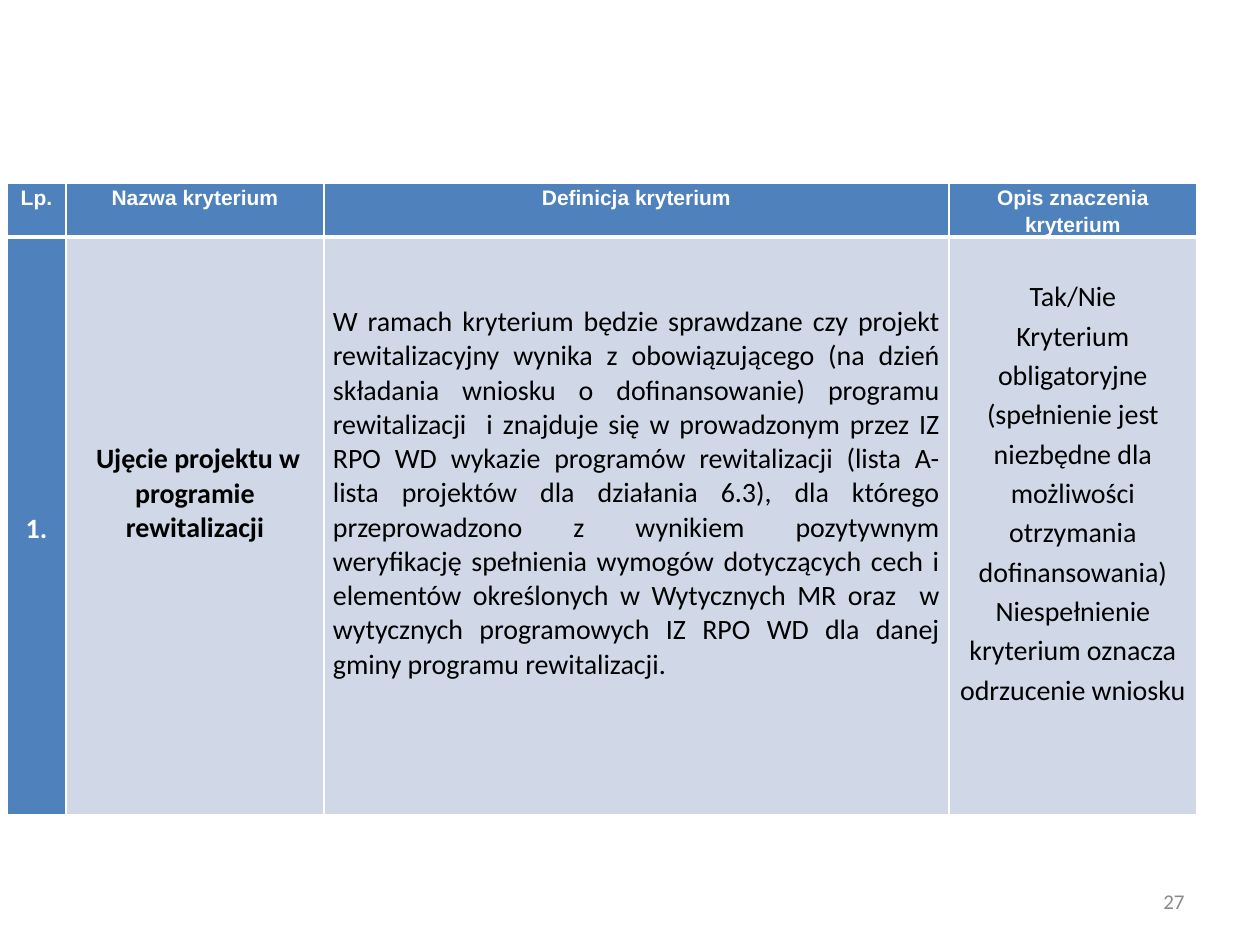
from lxml.etree import SubElement
from pptx import Presentation
from pptx.dml.color import RGBColor
from pptx.enum.text import MSO_ANCHOR as ANCHOR, PP_ALIGN as ALIGN
from pptx.oxml.ns import qn
from pptx.util import Emu, Pt

PX = 914400 // 126
COLORS = {"blue": "4F81BD", "pale": "D0D8E8", "white": "FFFFFF",
          "black": "000000", "gray": "898989"}


def write(frame, lines, font, size, color, bold=False, align=ALIGN.CENTER, spacing=None, after=None):
    frame.word_wrap = True
    for index, line in enumerate(lines):
        paragraph = frame.paragraphs[0] if index == 0 else frame.add_paragraph()
        paragraph.text = line
        paragraph.alignment = align
        paragraph.line_spacing = spacing
        paragraph.space_after = after
        paragraph.font.name = font
        paragraph.font.size = Pt(size)
        paragraph.font.bold = bold
        paragraph.font.color.rgb = RGBColor.from_string(COLORS[color])


def style(cell, fill, top, bottom, margin_top=0):
    cell.margin_left = cell.margin_right = Emu(9 * PX)
    cell.margin_top, cell.margin_bottom = Emu(margin_top * PX), 0
    properties = cell._tc.get_or_add_tcPr()
    for side, width in (("L", 1), ("R", 1), ("T", top), ("B", bottom)):
        line = SubElement(properties, qn(f"a:ln{side}"), w=str(Pt(width)))
        SubElement(SubElement(line, qn("a:solidFill")), qn("a:srgbClr"), val=COLORS["white"])
    cell.fill.solid()
    cell.fill.fore_color.rgb = RGBColor.from_string(COLORS[fill])


presentation = Presentation()
presentation.slide_width = Emu(1260 * PX)
presentation.slide_height = Emu(945 * PX)
slide = presentation.slides.add_slide(presentation.slide_layouts[6])

column_widths = [59, 258, 625, 248]
row_heights = [53, 578]
table = slide.shapes.add_table(
    2, 4, Emu(7 * PX), Emu(183 * PX),
    Emu(sum(column_widths) * PX), Emu(sum(row_heights) * PX)).table
for column, width in zip(table.columns, column_widths):
    column.width = Emu(width * PX)
for row, height in zip(table.rows, row_heights):
    row.height = Emu(height * PX)

headers = ["Lp.", "Nazwa kryterium", "Definicja kryterium", "Opis znaczenia kryterium"]
for index, header in enumerate(headers):
    cell = table.cell(0, index)
    style(cell, "blue", 1, 3)
    write(cell.text_frame, [header], "Arial", 12, "white", True, spacing=1.15, after=Pt(10))

definition = (
    "W ramach kryterium będzie sprawdzane czy projekt rewitalizacyjny wynika z obowiązującego "
    "(na dzień składania wniosku o dofinansowanie) programu rewitalizacji  i znajduje się w "
    "prowadzonym przez IZ RPO WD wykazie programów rewitalizacji (lista A-lista projektów dla "
    "działania 6.3), dla którego przeprowadzono z wynikiem pozytywnym weryfikację spełnienia "
    "wymogów dotyczących cech i elementów określonych w Wytycznych MR oraz  w wytycznych "
    "programowych IZ RPO WD dla danej gminy programu rewitalizacji.")
meaning = [
    "Tak/Nie",
    "Kryterium obligatoryjne",
    "(spełnienie jest niezbędne dla możliwości otrzymania dofinansowania)",
    "Niespełnienie kryterium oznacza",
    "odrzucenie wniosku",
]
criterion = [
    (["1."], "blue", "white", True, ALIGN.CENTER, 1.15, 0),
    ([" Ujęcie projektu w programie rewitalizacji"], "pale", "black", True, ALIGN.CENTER, None, 205),
    ([definition], "pale", "black", False, ALIGN.JUSTIFY, None, 68),
    (meaning, "pale", "black", False, ALIGN.CENTER, 1.15, 38),
]
for index, (lines, fill, color, bold, align, spacing, margin_top) in enumerate(criterion):
    cell = table.cell(1, index)
    style(cell, fill, 3, 1, margin_top)
    write(cell.text_frame, lines, "Calibri", 16, color, bold, align, spacing)
table.cell(1, 0).vertical_anchor = ANCHOR.MIDDLE

page_number = slide.shapes.add_textbox(Emu(903 * PX), Emu(876 * PX), Emu(294 * PX), Emu(50 * PX))
page_number.text_frame.vertical_anchor = ANCHOR.MIDDLE
write(page_number.text_frame, ["27"], "Calibri", 12, "gray", align=ALIGN.RIGHT)

presentation.save("out.pptx")
